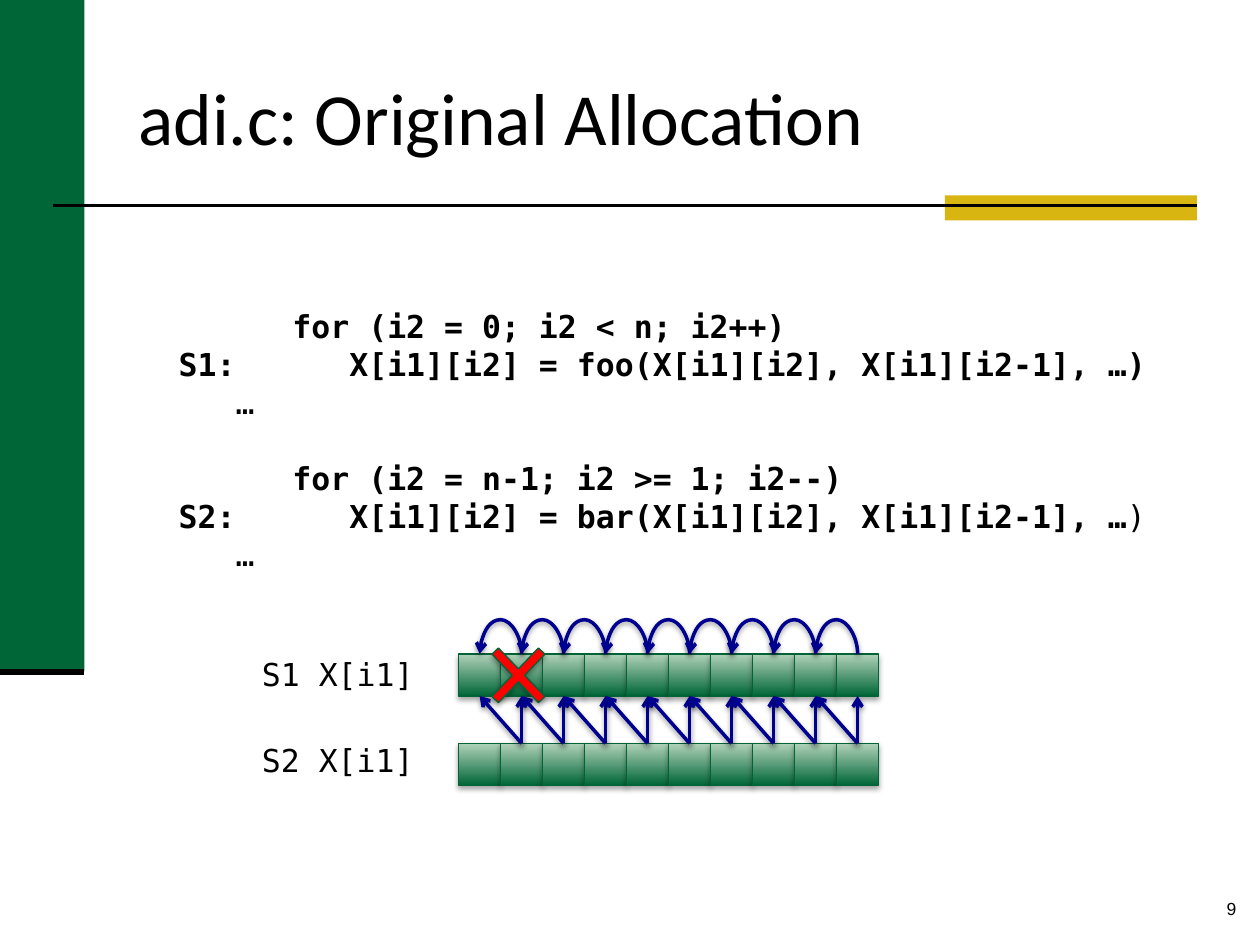
from dataclasses import dataclass

from lxml import etree
from pptx import Presentation
from pptx.dml.color import RGBColor
from pptx.enum.shapes import MSO_CONNECTOR, MSO_SHAPE
from pptx.enum.text import MSO_ANCHOR, PP_ALIGN
from pptx.oxml.ns import qn
from pptx.util import Inches, Pt

RECT, CROSS = MSO_SHAPE.RECTANGLE, MSO_SHAPE.MATH_MULTIPLY
STRAIGHT, CURVE = MSO_CONNECTOR.STRAIGHT, MSO_CONNECTOR.CURVE
TOP, MIDDLE = MSO_ANCHOR.TOP, MSO_ANCHOR.MIDDLE
LEFT, RIGHT = PP_ALIGN.LEFT, PP_ALIGN.RIGHT


@dataclass(frozen=True)
class Theme:
    green: str = "006638"
    pale_green: str = "B1D2B9"
    outline: str = "006437"
    gold: str = "D8B511"
    navy: str = "000090"
    red: str = "FF0000"
    black: str = "000000"
    title: tuple = ("Calibri", 42)
    code: tuple = ("DejaVu Sans Mono", 18)
    number: tuple = ("Arial", 10)


CELLS = 10
CELL = 1 / 3
ROW_LEFT, S1_TOP, S2_TOP = 3.64, 5.19, 5.9
ARC_RISE = 0.25

# Each line of code: runs of (text, bold), and space before in points
CODE = [
    ([("      for (i2 = 0; i2 < n; i2++)", True)], 0),
    ([("S1:      X[i1][i2] = foo(X[i1][i2], X[i1][i2-1], …)", True)], 0),
    ([("   …", False)], 0),
    ([("      for (i2 = n-1; i2 >= 1; i2--)", True)], 22),
    ([("S2:      X[i1][i2] = bar(X[i1][i2], X[i1][i2-1], …", True), (")", False)], 0),
    ([("   …", False)], 0),
]


def rgb(value):
    return RGBColor.from_string(value)


def add_effects(shape, shadow=None):
    """Add an effect list; shadow is (opacity in %, distance in points)."""
    effects = etree.SubElement(shape._element.spPr, qn("a:effectLst"))
    if shadow:
        opacity, distance = shadow
        outer = etree.SubElement(effects, qn("a:outerShdw"), blurRad=str(Pt(3.1)),
                                 dist=str(Pt(distance)), dir="5400000", rotWithShape="0")
        color = etree.SubElement(outer, qn("a:srgbClr"), val=Theme.black)
        etree.SubElement(color, qn("a:alpha"), val=str(opacity * 1000))


class SlideBuilder:
    def __init__(self, slide, theme):
        self.s = slide
        self.theme = theme

    def shape(self, kind, box, fill, outlined=False):
        """Draw a preset shape; a tuple of two colours makes an upward gradient."""
        sp = self.s.shapes.add_shape(kind, *map(Inches, box))
        if isinstance(fill, tuple):
            sp.fill.gradient()
            sp.fill.gradient_angle = 90
            for stop, color in zip(sp.fill.gradient_stops, fill):
                stop.color.rgb = rgb(color)
        else:
            sp.fill.solid()
            sp.fill.fore_color.rgb = rgb(fill)
        if outlined:
            sp.line.color.rgb = rgb(self.theme.outline)
            sp.line.width = Pt(0.75)
        else:
            sp.line.fill.background()
        add_effects(sp, (35, 1.8) if outlined else None)
        return sp

    def line(self, start, end, color, width, kind=STRAIGHT, arrow=False):
        cx = self.s.shapes.add_connector(kind, *map(Inches, start + end))
        cx.line.color.rgb = rgb(color)
        cx.line.width = Pt(width)
        if arrow:
            ln = cx._element.spPr.find(qn("a:ln"))
            etree.SubElement(ln, qn("a:tailEnd"), type="arrow")
        add_effects(cx, (38, 1.6) if arrow else None)
        return cx

    def arrow(self, start, end, kind=STRAIGHT):
        return self.line(start, end, self.theme.navy, 2, kind, arrow=True)

    def arc(self, x, y):
        """Arch from one cell centre back to the previous, midway at x.

        A curved connector turned by 270 degrees, whose thin side is
        stretched to the rise by its adjustment.
        """
        thin = Pt(0.13) / Inches(1)
        cx = self.arrow((x - thin / 2, y + CELL / 2), (x + thin / 2, y - CELL / 2), CURVE)
        spPr = cx._element.spPr
        spPr.find(qn("a:xfrm")).set("rot", "16200000")
        geom = spPr.find(qn("a:prstGeom"))
        av = geom.find(qn("a:avLst"))
        if av is None:
            av = etree.SubElement(geom, qn("a:avLst"))
        etree.SubElement(av, qn("a:gd"), name="adj1",
                         fmla=f"val {round(ARC_RISE / thin * 100000)}")

    def text(self, box, lines, style, anchor=TOP, align=LEFT, wrap=True):
        tf = self.s.shapes.add_textbox(*map(Inches, box)).text_frame
        tf.word_wrap = wrap
        tf.vertical_anchor = anchor
        name, size = style
        for i, (runs, before) in enumerate(lines):
            p = tf.add_paragraph() if i else tf.paragraphs[0]
            p.alignment = align
            if before:
                p.space_before = Pt(before)
            for content, bold in runs:
                r = p.add_run()
                r.text = content
                r.font.color.rgb = rgb(self.theme.black)
                font = {"name": name, "size": Pt(size), "bold": bold}
                for key, value in font.items():
                    setattr(r.font, key, value)

    def label(self, box, content, style, **layout):
        self.text(box, [([(content, False)], 0)], style, **layout)

    def cell_row(self, top):
        for i in range(CELLS):
            self.shape(RECT, (ROW_LEFT + i * CELL, top, CELL, CELL),
                       (self.theme.green, self.theme.pale_green), outlined=True)


def main():
    prs = Presentation()
    prs.slide_width, prs.slide_height = Inches(10), Inches(7.5)
    t = Theme()
    b = SlideBuilder(prs.slides.add_slide(prs.slide_layouts[6]), t)

    b.shape(RECT, (0, 0, 0.67, 5.33), t.green)
    b.shape(RECT, (7.5, 1.55, 2, 0.2), t.gold)
    b.line((0.42, 1.63), (9.5, 1.63), t.black, 1.5)
    b.line((0, 5.33), (0.67, 5.33), t.black, 3.5)
    b.label((1, 0.3, 8.5, 1.25), "adi.c: Original Allocation", t.title, anchor=MIDDLE)
    b.text((1.32, 2.39, 7.93, 2.22), CODE, t.code, wrap=False)

    b.label((1.98, 5.15, 1.41, 0.4), "S1 X[i1]", t.code, wrap=False)
    b.label((1.98, 5.83, 1.41, 0.4), "S2 X[i1]", t.code, wrap=False)
    for top in (S1_TOP, S2_TOP):
        b.cell_row(top)
    for i in range(1, CELLS):
        edge = ROW_LEFT + i * CELL
        center, previous = edge + CELL / 2, edge - CELL / 2
        b.arc(edge, S1_TOP)
        for target in (center, previous):
            b.arrow((center, S2_TOP), (target, S1_TOP + CELL))

    cross = b.shape(CROSS, (3.76, 4.99, 0.71, 0.74), t.red, outlined=True)
    cross.adjustments[0] = 0.1
    b.label((7.83, 7.08, 2.08, 0.25), "9", t.number, align=RIGHT)
    prs.save("out.pptx")


if __name__ == "__main__":
    main()
